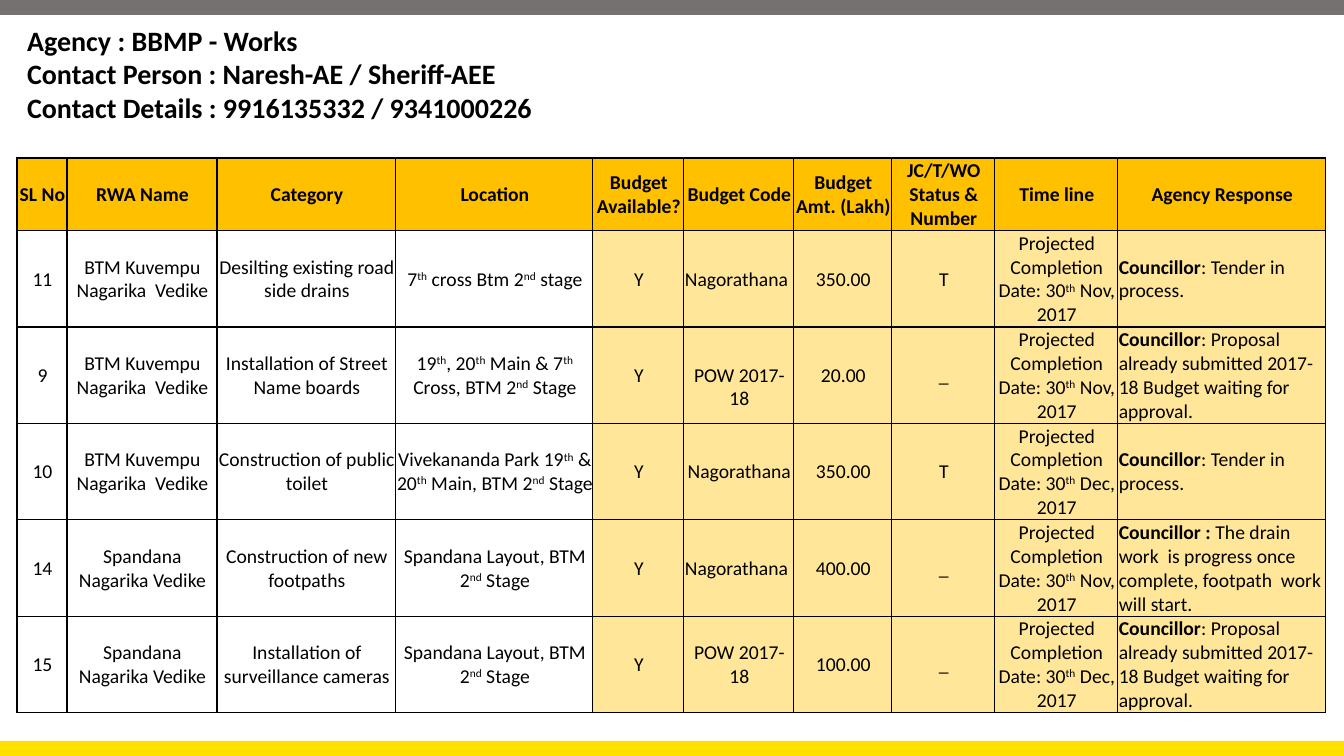
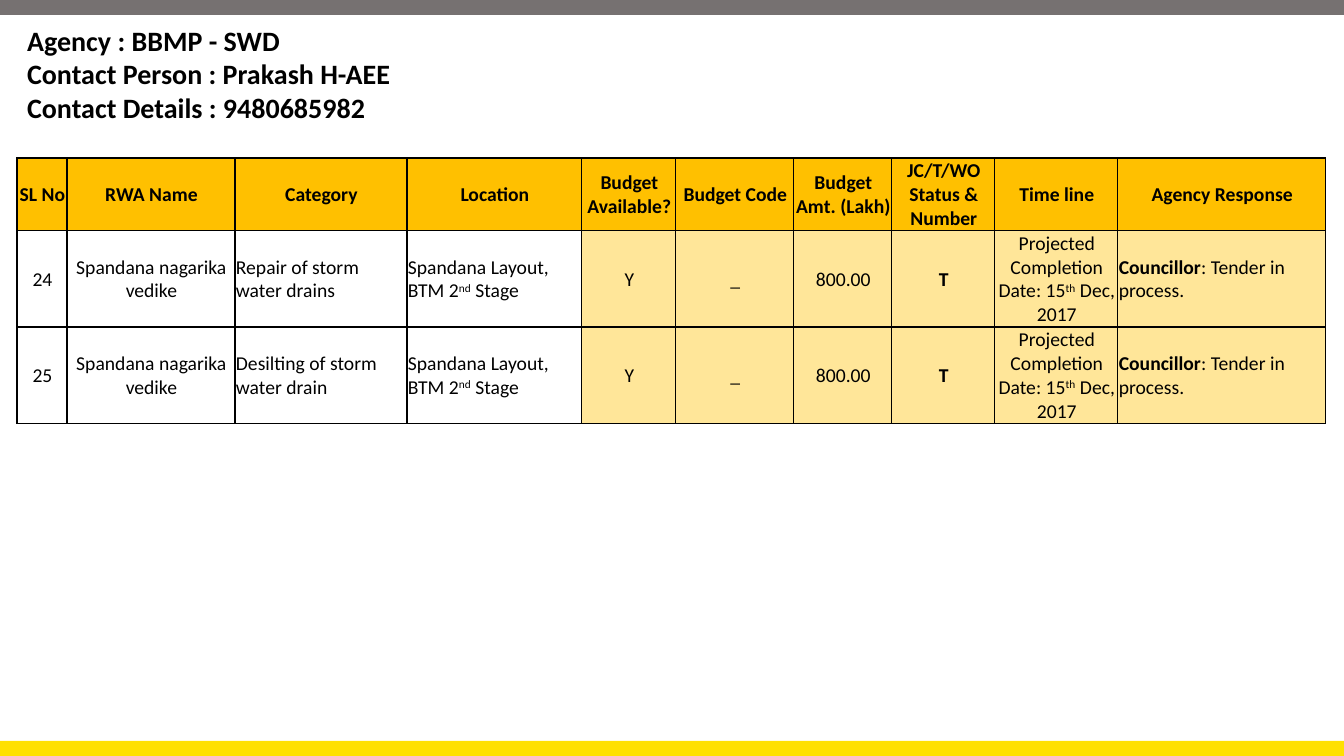
from dataclasses import dataclass

from lxml import etree
from pptx import Presentation
from pptx.dml.color import RGBColor
from pptx.enum.shapes import MSO_SHAPE
from pptx.enum.text import MSO_ANCHOR, MSO_AUTO_SIZE, PP_ALIGN
from pptx.oxml.ns import qn
from pptx.util import Pt

EMU_PER_PX = 914400 / 100.8
W, H = 1344, 756


@dataclass(frozen=True)
class Theme:
    font: str = "Calibri"
    title_size: int = 20
    cell_size: int = 14
    text: str = "000000"
    border: str = "000000"
    top_band: str = "767171"
    bottom_band: str = "FFE000"
    header: str = "FFC000"
    agency: str = "FFE699"
    plain: str = "FFFFFF"


THEME = Theme()


def px(n):
    return round(n * EMU_PER_PX)


def write(p, text, size, bold=False):
    """Fill a paragraph; *...* marks bold text and ^...^ superscript."""
    for i, part in enumerate(text.split("*")):
        for j, piece in enumerate(part.split("^")):
            if not piece:
                continue
            r = p.add_run()
            r.text = piece
            fmt = {"name": THEME.font, "size": Pt(size), "bold": bold or i % 2 == 1}
            for key, value in fmt.items():
                setattr(r.font, key, value)
            r.font.color.rgb = RGBColor.from_string(THEME.text)
            if j % 2:
                r.font._rPr.set("baseline", "30000")


HEADERS = ["SL No", "RWA Name", "Category", "Location", "Budget Available?",
           "Budget Code", "Budget Amt. (Lakh)", "JC/T/WO Status & Number",
           "Time line", "Agency Response"]
FIRST_AGENCY_COL = 4
TABLE_LEFT, TABLE_TOP, HEADER_H, ROW_H = 17, 158, 71, 95
SHARED_WIDTHS = [98, 103, 123, 208]

# A leading "<" aligns the cell to the left.
DEC_15, NOV_30, DEC_30 = [f"Projected Completion Date: {day}, 2017"
                          for day in ("15^th^ Dec", "30^th^ Nov", "30^th^ Dec")]
TENDER = "<*Councillor*: Tender in process."
PROPOSAL = ("<*Councillor*: Proposal already submitted 2017-18 Budget "
            "waiting for approval.")
DRAIN = ("<*Councillor : *The drain work  is progress once complete, "
         "footpath  work will start.")
KUVEMPU = "BTM Kuvempu Nagarika  Vedike"
SPANDANA = "Spandana Nagarika Vedike"
LAYOUT_STAGE = "Spandana Layout, BTM 2^nd^ Stage"

AGENCIES = [
    {
        "title": ["Agency : BBMP - Works",
                  "Contact Person : Naresh-AE / Sheriff-AEE",
                  "Contact Details : 9916135332 / 9341000226"],
        "widths": [50, 150, 179, 197, 91, 110],
        "lowered": [(2, 5)],
        "rows": [
            ["11", KUVEMPU, "Desilting existing road side drains",
             "7^th^ cross Btm 2^nd^ stage",
             "Y", "<Nagorathana", "350.00", "T", NOV_30, TENDER],
            ["9", KUVEMPU, "Installation of Street Name boards",
             "19^th^, 20^th^ Main & 7^th^ Cross, BTM 2^nd^ Stage",
             "Y", "POW 2017-18", "20.00", "_", NOV_30, PROPOSAL],
            ["10", KUVEMPU, "Construction of public toilet",
             "Vivekananda Park 19^th^ & 20^th^ Main, BTM 2^nd^ Stage",
             "Y", "Nagorathana", "350.00", "T", DEC_30, TENDER],
            ["14", SPANDANA, "Construction of new footpaths", LAYOUT_STAGE,
             "Y", "<Nagorathana", "400.00", "_", NOV_30, DRAIN],
            ["15", SPANDANA, "Installation of surveillance cameras", LAYOUT_STAGE,
             "Y", "POW 2017-18", "100.00", "_", DEC_30, PROPOSAL],
        ],
    },
    {
        "title": ["Agency : BBMP - SWD",
                  "Contact Person : Prakash H-AEE",
                  "Contact Details : 9480685982"],
        "widths": [50, 168, 172, 175, 94, 118],
        "lowered": [],
        "rows": [
            [number, "Spandana nagarika vedike", work, "<" + LAYOUT_STAGE,
             "Y", "_", "800.00", "*T*", DEC_15, TENDER]
            for number, work in [("24", "<Repair of storm water drains"),
                                 ("25", "<Desilting of storm water drain")]
        ],
    },
]

prs = Presentation()
prs.slide_width, prs.slide_height = px(W), px(H)
layout = prs.slide_layouts.get_by_name("Title Only")
title = layout.placeholders[0]
title.left, title.top, title.width, title.height = px(17), px(18), px(1309), px(112)
slides = [prs.slides.add_slide(layout) for _ in AGENCIES]

# Bands belong to the layout, so both slides inherit them.
for top, color in [(H - 15, THEME.bottom_band), (0, THEME.top_band)]:
    sp = slides[0].shapes.add_shape(MSO_SHAPE.RECTANGLE, 0, px(top), px(W), px(15))
    sp.shadow.inherit = False
    sp.fill.solid()
    sp.fill.fore_color.rgb = RGBColor.from_string(color)
    sp.line.fill.background()
    layout.shapes.element.append(sp.element)

for s, agency in zip(slides, AGENCIES):
    tf = s.shapes.title.text_frame
    for key, value in {"word_wrap": True, "auto_size": MSO_AUTO_SIZE.NONE,
                       "vertical_anchor": MSO_ANCHOR.TOP}.items():
        setattr(tf, key, value)
    for i, line in enumerate(agency["title"]):
        p = tf.add_paragraph() if i else tf.paragraphs[0]
        p.alignment = PP_ALIGN.LEFT
        write(p, line, THEME.title_size, bold=True)

    rows = [HEADERS] + agency["rows"]
    widths = agency["widths"] + SHARED_WIDTHS
    heights = [HEADER_H] + [ROW_H] * len(agency["rows"])
    table = s.shapes.add_table(len(rows), len(widths), px(TABLE_LEFT), px(TABLE_TOP),
                               px(sum(widths)), px(sum(heights))).table
    table.first_row = table.horz_banding = False
    for col, width in zip(table.columns, widths):
        col.width = px(width)
    for row, height in zip(table.rows, heights):
        row.height = px(height)

    for r_i, row in enumerate(rows):
        for c_i, text in enumerate(row):
            cell = table.cell(r_i, c_i)
            top = 24 if (r_i, c_i) in agency["lowered"] else 1
            for key, value in {"margin_left": px(1), "margin_right": 0,
                               "margin_top": px(top), "margin_bottom": 0,
                               "vertical_anchor": MSO_ANCHOR.MIDDLE}.items():
                setattr(cell, key, value)

            tc_pr = cell._tc.get_or_add_tcPr()
            for side in ("lnL", "lnR", "lnT", "lnB"):
                ln = etree.SubElement(tc_pr, qn(f"a:{side}"), w=str(Pt(1)))
                fill = etree.SubElement(ln, qn("a:solidFill"))
                etree.SubElement(fill, qn("a:srgbClr"), val=THEME.border)

            if r_i == 0:
                color = THEME.header
            elif c_i >= FIRST_AGENCY_COL:
                color = THEME.agency
            else:
                color = THEME.plain
            cell.fill.solid()
            cell.fill.fore_color.rgb = RGBColor.from_string(color)

            p = cell.text_frame.paragraphs[0]
            p.alignment = PP_ALIGN.LEFT if text.startswith("<") else PP_ALIGN.CENTER
            write(p, text.removeprefix("<"), THEME.cell_size, bold=r_i == 0)

prs.save("out.pptx")
